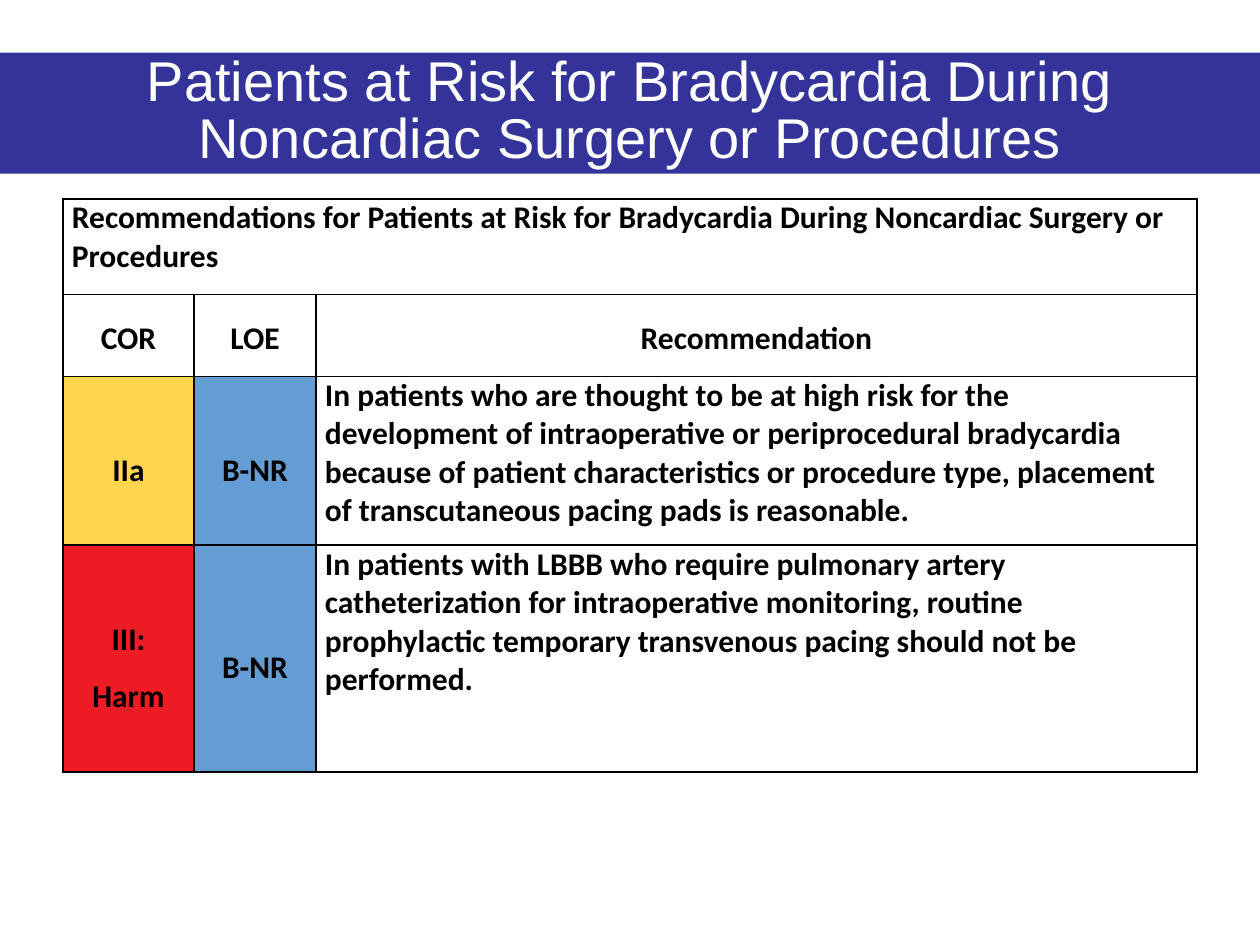
from dataclasses import dataclass

from lxml import etree
from pptx import Presentation
from pptx import util as u
from pptx.dml.color import RGBColor
from pptx.enum import shapes, text
from pptx.oxml import ns


@dataclass(frozen=True)
class Theme:
    banner: str = "333399"
    light: str = "FFFFFF"
    ink: str = "000000"
    moderate: str = "FFD54F"
    harm: str = "ED1C24"
    evidence: str = "649DD4"
    title_font: str = "Arial"
    table_font: str = "Calibri"
    title_size: int = 32
    table_size: int = 18
    border_width: int = 1


THEME = Theme()
CENTER, LEFT = text.PP_ALIGN.CENTER, text.PP_ALIGN.LEFT

TITLE = "Patients at Risk for Bradycardia During Noncardiac Surgery or Procedures"
HEADING = "Recommendations for " + TITLE
COLUMN_NAMES = ("COR", "LOE", "Recommendation")
COLUMN_WIDTHS = (2.64, 2.46, 17.76)
ROW_HEIGHTS = (1.93, 1.65, 3.4, 4.57)
# Class of recommendation, its colour, level of evidence, wording
RECOMMENDATIONS = (
    ("IIa", THEME.moderate, "B-NR",
     "In patients who are thought to be at high risk for the development of "
     "intraoperative or periprocedural bradycardia because of patient "
     "characteristics or procedure type, placement of transcutaneous pacing "
     "pads is reasonable."),
    ("III: Harm", THEME.harm, "B-NR",
     "In patients with LBBB who require pulmonary artery catheterization for "
     "intraoperative monitoring, routine prophylactic temporary transvenous "
     "pacing should not be performed."),
)


def add_span(para, words, font, size, color, bold=False):
    span = para.add_run()
    span.text = words
    span.font.name = font
    span.font.size = u.Pt(size)
    span.font.bold = bold
    span.font.color.rgb = RGBColor.from_string(color)


def add_banner(page, left, top, width, height):
    """Full-width band with the slide title."""
    box = page.shapes.add_shape(shapes.MSO_SHAPE.RECTANGLE, left, top, width, height)
    box.shadow.inherit = False
    box.fill.solid()
    box.fill.fore_color.rgb = RGBColor.from_string(THEME.banner)
    box.line.fill.background()
    frame = box.text_frame
    frame.word_wrap = True
    frame.vertical_anchor = text.MSO_ANCHOR.MIDDLE
    para = frame.paragraphs[0]
    para.alignment = CENTER
    para.line_spacing = 0.84
    add_span(para, TITLE, THEME.title_font, THEME.title_size, THEME.light)


def set_borders(cell):
    """Draw all four sides; border elements come before the fill."""
    props = cell._tc.get_or_add_tcPr()
    for position, side in enumerate(("lnL", "lnR", "lnT", "lnB")):
        line = etree.Element(ns.qn(f"a:{side}"), w=str(u.Pt(THEME.border_width)))
        fill = etree.SubElement(line, ns.qn("a:solidFill"))
        etree.SubElement(fill, ns.qn("a:srgbClr"), val=THEME.ink)
        props.insert(position, line)


def fill_cell(cell, words, fill=None, align=LEFT, spacing=1.0):
    para = cell.text_frame.paragraphs[0]
    para.alignment = align
    para.line_spacing = spacing
    add_span(para, words, THEME.table_font, THEME.table_size, THEME.ink, bold=True)
    if align == CENTER:
        cell.vertical_anchor = text.MSO_ANCHOR.MIDDLE
    if fill:
        cell.fill.solid()
        cell.fill.fore_color.rgb = RGBColor.from_string(fill)


def add_recommendations(page, left, top, width, height):
    """Heading row, column names, then one row per recommendation."""
    table = page.shapes.add_table(
        len(ROW_HEIGHTS), len(COLUMN_WIDTHS), left, top, width, height).table
    table.first_row = table.horz_banding = False
    for column, size in zip(table.columns, COLUMN_WIDTHS):
        column.width = u.Cm(size)
    for row, size in zip(table.rows, ROW_HEIGHTS):
        row.height = u.Cm(size)
    for cell in table.iter_cells():
        cell.margin_left = cell.margin_right = u.Cm(0.18)
        cell.margin_top = cell.margin_bottom = 0
        cell.fill.background()
        set_borders(cell)

    table.cell(0, 0).merge(table.cell(0, len(COLUMN_WIDTHS) - 1))
    fill_cell(table.cell(0, 0), HEADING)
    for index, name in enumerate(COLUMN_NAMES):
        fill_cell(table.cell(1, index), name, align=CENTER, spacing=1.15)
    for index, (grade, color, evidence, advice) in enumerate(RECOMMENDATIONS, 2):
        fill_cell(table.cell(index, 0), grade, color, CENTER, 1.5)
        fill_cell(table.cell(index, 1), evidence, THEME.evidence, CENTER, 1.5)
        fill_cell(table.cell(index, 2), advice)


def main():
    deck = Presentation()
    deck.slide_width, deck.slide_height = u.Cm(25.4), u.Cm(19.05)
    page = deck.slides.add_slide(deck.slide_layouts[6])
    add_banner(page, 0, u.Cm(1.06), deck.slide_width, u.Cm(2.44))
    table_width = u.Cm(sum(COLUMN_WIDTHS))
    add_recommendations(page, (deck.slide_width - table_width) // 2, u.Cm(4.01),
                        table_width, u.Cm(sum(ROW_HEIGHTS)))
    deck.save("out.pptx")


if __name__ == "__main__":
    main()
